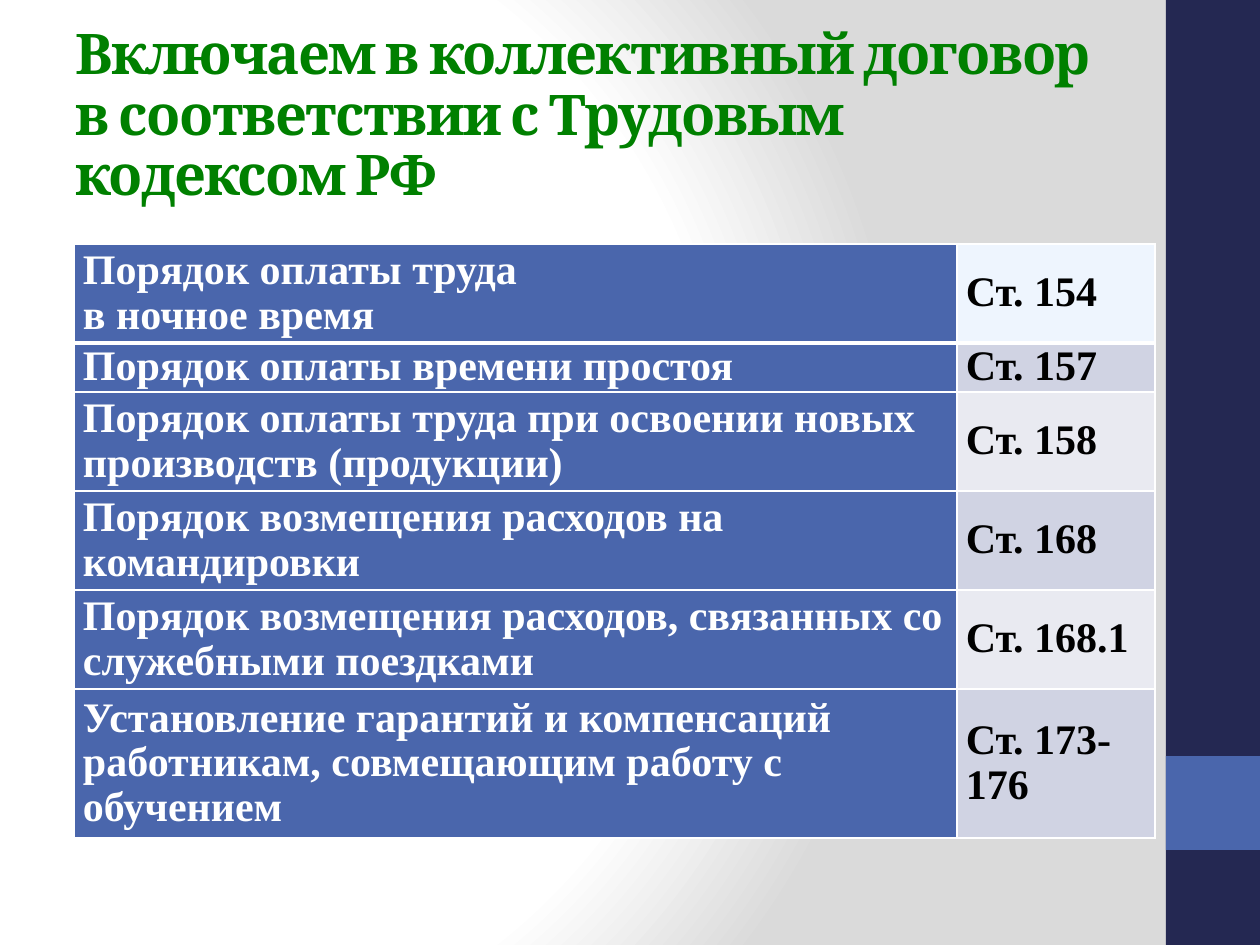
import pptx
import pptx.dml.color
import pptx.enum.shapes
import pptx.enum.text
import pptx.oxml
import pptx.oxml.ns
import pptx.util
from dataclasses import dataclass

PX = 914400 // 126
ANCHOR = pptx.enum.text.MSO_ANCHOR.MIDDLE


@dataclass(frozen=True)
class Theme:
    white: str = "FFFFFF"
    black: str = "000000"
    grey: str = "DADADA"
    navy: str = "242852"
    blue: str = "4A66AC"
    green: str = "008000"
    pale: str = "EEF5FE"
    bands: tuple = ("D0D3E3", "E9EAF1")
    title_font: str = "Cambria"
    table_font: str = "Times New Roman"
    title_size: int = 32
    table_size: int = 24


def rgb(value):
    return pptx.dml.color.RGBColor.from_string(value)


class SlideBuilder:
    def __init__(self, slide, theme):
        self.slide = slide
        self.theme = theme

    def background(self):
        """Circular gradient, white up to three quarters and then grey."""
        fill = self.slide.background.fill
        fill.solid()
        stops = "".join(
            f'<a:gs pos="{pos * 1000}"><a:srgbClr val="{color}"/></a:gs>'
            for pos, color in ((0, self.theme.white), (75, self.theme.white), (100, self.theme.grey)))
        gradient = pptx.oxml.parse_xml(
            f'<a:gradFill {pptx.oxml.ns.nsdecls("a")} rotWithShape="1"><a:gsLst>{stops}</a:gsLst>'
            '<a:path path="circle"><a:fillToRect l="20000" t="50000" r="100000" b="50000"/>'
            '</a:path></a:gradFill>')
        solid = self.slide.background._cSld.find(".//" + pptx.oxml.ns.qn("a:solidFill"))
        solid.getparent().replace(solid, gradient)

    def rectangle(self, left, top, width, height, color):
        shape = self.slide.shapes.add_shape(
            pptx.enum.shapes.MSO_SHAPE.RECTANGLE, *(n * PX for n in (left, top, width, height)))
        shape.shadow.inherit = False
        shape.fill.solid()
        shape.fill.fore_color.rgb = rgb(color)
        shape.line.fill.background()

    def style(self, frame, font, size, color, spacing):
        frame.word_wrap = True
        for paragraph in frame.paragraphs:
            paragraph.line_spacing = spacing
            for run in paragraph.runs:
                values = {"name": font, "size": pptx.util.Pt(size), "bold": True}
                for name, value in values.items():
                    setattr(run.font, name, value)
                run.font.color.rgb = rgb(color)

    def title(self, left, top, width, height, text):
        box = self.slide.shapes.add_textbox(*(n * PX for n in (left, top, width, height)))
        frame = box.text_frame
        frame.text = text
        frame.vertical_anchor = ANCHOR
        self.style(frame, self.theme.title_font, self.theme.title_size, self.theme.green, 0.9)
        for run in frame.paragraphs[0].runs:
            run.font._element.set("spc", "-100")

    def borders(self, cell, bottom):
        properties = cell._tc.get_or_add_tcPr()
        for side, points in (("L", 1), ("R", 1), ("T", 1), ("B", bottom)):
            properties.append(pptx.oxml.parse_xml(
                f'<a:ln{side} {pptx.oxml.ns.nsdecls("a")} w="{points * 12700}"><a:solidFill>'
                f'<a:srgbClr val="{self.theme.white}"/></a:solidFill></a:ln{side}>'))

    def cell(self, cell, text, fill, color, bottom):
        margins = {"margin_left": 9, "margin_right": 9, "margin_top": 0, "margin_bottom": 0}
        for name, value in margins.items():
            setattr(cell, name, value * PX)
        cell.vertical_anchor = ANCHOR
        cell.text_frame.text = text
        self.style(cell.text_frame, self.theme.table_font, self.theme.table_size, color, 0.96)
        self.borders(cell, bottom)
        cell.fill.solid()
        cell.fill.fore_color.rgb = rgb(fill)

    def table(self, left, top, widths, heights, rows):
        theme = self.theme
        frame = self.slide.shapes.add_table(
            len(rows), len(widths), left * PX, top * PX, sum(widths) * PX, sum(heights) * PX)
        table = frame.table
        for column, width in zip(table.columns, widths):
            column.width = width * PX
        for index, (row, height, (topic, article)) in enumerate(zip(table.rows, heights, rows)):
            row.height = height * PX
            bottom = 1 if index else 3
            band = theme.bands[(index - 1) % 2] if index else theme.pale
            self.cell(row.cells[0], topic, theme.blue, theme.white, bottom)
            self.cell(row.cells[1], article, band, theme.black, bottom)


# \v breaks the line, \n starts a paragraph
ARTICLES = [
    ("Порядок оплаты труда \vв ночное время", "Ст. 154"),
    ("Порядок оплаты времени простоя", "Ст. 157"),
    ("Порядок оплаты труда при освоении новых производств (продукции)", "Ст. 158"),
    ("Порядок возмещения расходов на командировки", "Ст. 168"),
    ("Порядок возмещения расходов, связанных со служебными поездками", "Ст. 168.1"),
    ("Установление гарантий и компенсаций работникам, совмещающим работу с обучением",
     "Ст. 173-\n176"),
]


def main():
    presentation = pptx.Presentation()
    presentation.slide_width = 1260 * PX
    presentation.slide_height = 945 * PX
    theme = Theme()
    builder = SlideBuilder(presentation.slides.add_slide(presentation.slide_layouts[6]), theme)
    builder.background()
    builder.rectangle(1166, 0, 94, 945, theme.navy)
    builder.rectangle(1166, 756, 94, 94, theme.blue)
    builder.title(63, 38, 1050, 158,
                  "Включаем в коллективный договор в соответствии с Трудовым кодексом РФ")
    builder.table(74, 244, (883, 198), (99, 49, 99, 99, 99, 149), ARTICLES)
    presentation.save("out.pptx")


if __name__ == "__main__":
    main()
